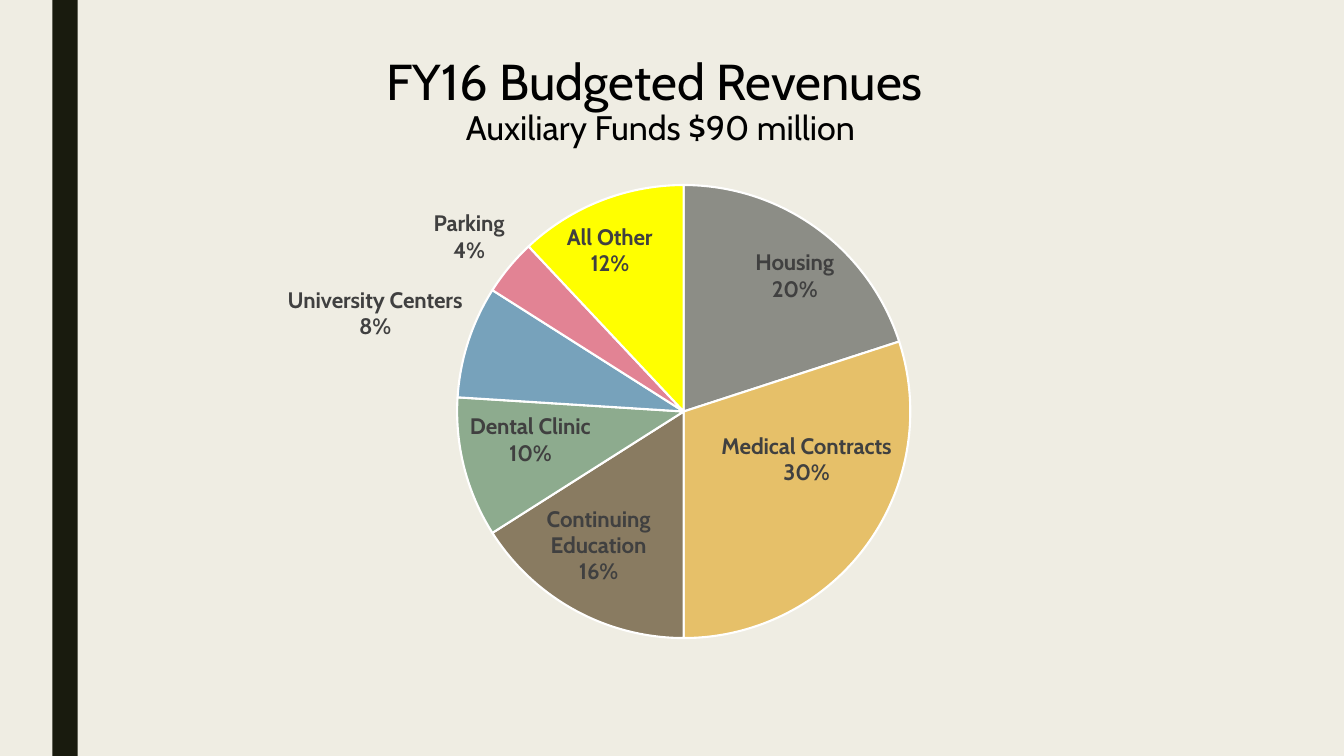
import pptx
import pptx.chart.data
import pptx.dml.color
import pptx.enum.chart
import pptx.enum.shapes
import pptx.enum.text
import pptx.oxml
import pptx.oxml.ns
import pptx.util

Inches = pptx.util.Inches
Pt = pptx.util.Pt
FONT = "Cabin"
COLORS = {"back": "EFEDE3", "bar": "191B0E", "title": "000000",
          "label": "404040", "edge": "FFFFFF"}
place = pptx.enum.chart.XL_LABEL_POSITION
# name, percent, fill, label position
SLICES = [
    ("Housing", 20, "8C8D86", place.BEST_FIT),
    ("Medical Contracts", 30, "E6C069", place.BEST_FIT),
    ("Continuing Education", 16, "897B61", place.BEST_FIT),
    ("Dental Clinic", 10, "8DAB8E", place.INSIDE_END),
    ("University Centers", 8, "77A2BB", place.OUTSIDE_END),
    ("Parking", 4, "E28394", place.OUTSIDE_END),
    ("All Other", 12, "FFFF00", place.BEST_FIT),
]


def paint(fill, color):
    fill.solid()
    fill.fore_color.rgb = pptx.dml.color.RGBColor.from_string(color)


def style(font, size, color, bold=False):
    font.name = FONT
    font.size = Pt(size)
    font.bold = bold
    font.color.rgb = pptx.dml.color.RGBColor.from_string(color)


deck = pptx.Presentation()
deck.slide_width = Inches(13.33)
deck.slide_height = Inches(7.5)
slide = deck.slides.add_slide(deck.slide_layouts[6])
paint(slide.background.fill, COLORS["back"])

# Side bar
bar = slide.shapes.add_shape(pptx.enum.shapes.MSO_SHAPE.RECTANGLE,
                             Inches(0.52), 0, Inches(0.25), Inches(7.5))
bar.shadow.inherit = False
paint(bar.fill, COLORS["bar"])
bar.line.fill.background()

# Pie chart
data = pptx.chart.data.CategoryChartData()
data.categories = [row[0] for row in SLICES]
data.add_series("Series 1", [row[1] for row in SLICES])
chart = slide.shapes.add_chart(
    pptx.enum.chart.XL_CHART_TYPE.PIE, Inches(0.33), Inches(1.21),
    Inches(12.65), Inches(5.69), data).chart
chart.has_legend = False
chart.has_title = False
style(chart.font, 10, COLORS["title"])
chart.plots[0].vary_by_categories = True

pie = chart.plots[0].series[0]
labels = pie.data_labels
style(labels.font, 16, COLORS["label"], True)
labels.number_format = "0%"
labels.number_format_is_linked = False
labels.position = place.BEST_FIT

for i, (name, share, color, spot) in enumerate(SLICES):
    point = pie.points[i]
    paint(point.format.fill, color)
    paint(point.format.line.fill, COLORS["edge"])
    point.format.line.width = Pt(1.5)
    if spot != place.BEST_FIT:
        style(point.data_label.font, 16, COLORS["label"], True)
        point.data_label.position = spot

# Every label shows name and percent on separate lines
tree = labels._element
space = pptx.oxml.ns.nsdecls("c")
for node in [tree] + tree.xpath("c:dLbl"):
    for flag, on in (("Val", 0), ("CatName", 1), ("Percent", 1)):
        node.xpath(f"c:show{flag}")[0].set("val", str(on))
    node.xpath("c:showBubbleSize")[0].addnext(pptx.oxml.parse_xml(
        f"<c:separator {space}>\n</c:separator>"))

# Fixed plot area, as fractions of the chart
area = chart._chartSpace.xpath("c:chart/c:plotArea")[0]
for old in area.xpath("c:layout"):
    area.remove(old)
area.insert(0, pptx.oxml.parse_xml(
    f'<c:layout {space}><c:manualLayout><c:layoutTarget val="inner"/>'
    '<c:xMode val="edge"/><c:yMode val="edge"/>'
    '<c:x val="0.33"/><c:y val="0.11"/><c:w val="0.36"/><c:h val="0.79"/>'
    '</c:manualLayout></c:layout>'))

# Title
box = slide.shapes.add_textbox(Inches(0.22), Inches(0.52),
                               Inches(12.66), Inches(0.69))
frame = box.text_frame
frame.word_wrap = True
frame.vertical_anchor = pptx.enum.text.MSO_ANCHOR.TOP
para = frame.paragraphs[0]
para.alignment = pptx.enum.text.PP_ALIGN.CENTER
para.line_spacing = 0.89
head = para.add_run()
head.text = "FY16 Budgeted Revenues "
style(head.font, 36, COLORS["title"])
para.add_line_break()
sub = para.add_run()
sub.text = "Auxiliary Funds $90 million"
style(sub.font, 24.3, COLORS["title"])

deck.save("out.pptx")
